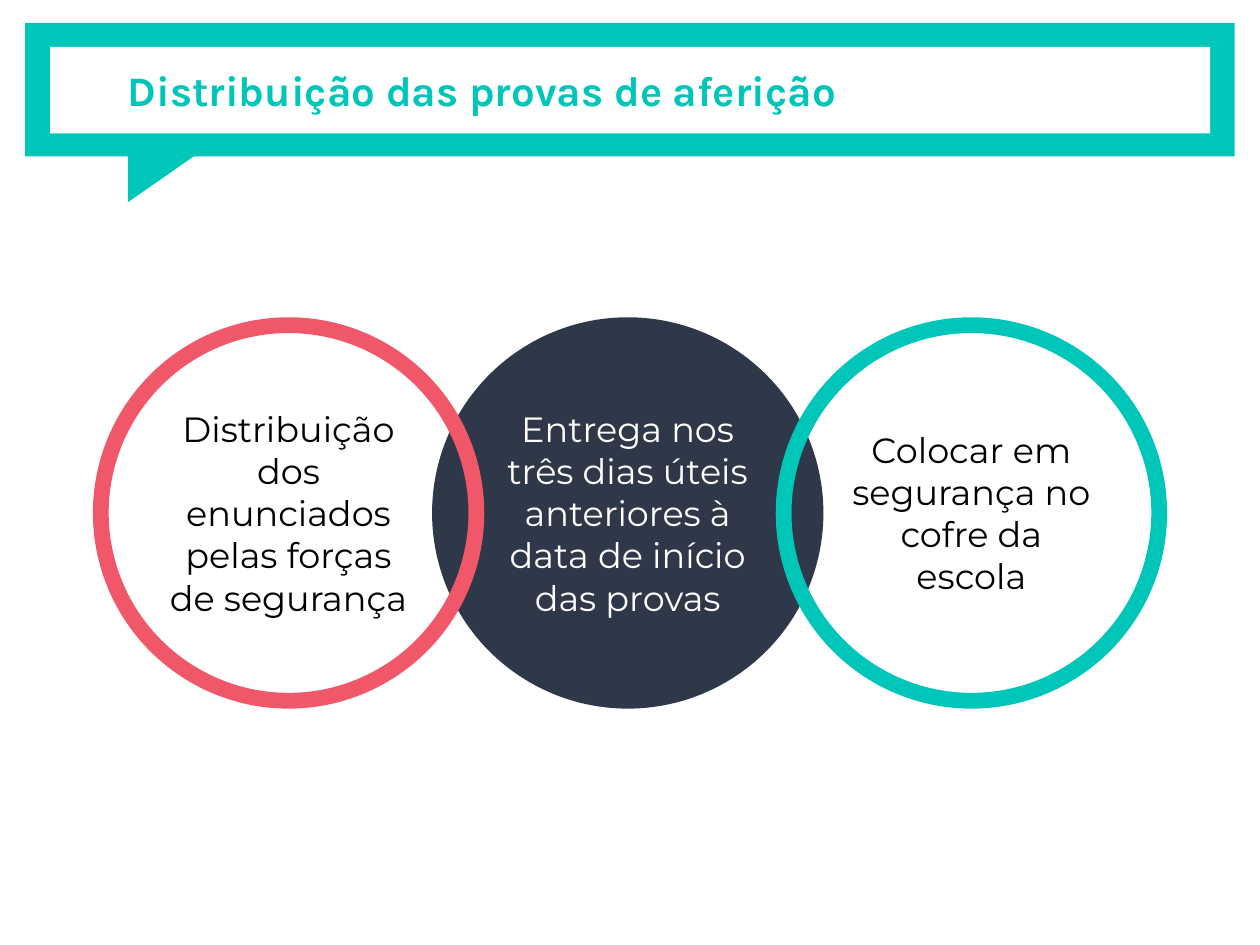
from dataclasses import dataclass
from typing import Optional

import pptx
import pptx.dml.color
import pptx.enum.shapes
import pptx.enum.text
import pptx.util

Pt = pptx.util.Pt
RGBColor = pptx.dml.color.RGBColor
MSO_SHAPE = pptx.enum.shapes.MSO_SHAPE
PP_ALIGN = pptx.enum.text.PP_ALIGN

TEAL = RGBColor(0x00, 0xC5, 0xB9)
NAVY = RGBColor(0x2F, 0x38, 0x48)
CORAL = RGBColor(0xF0, 0x57, 0x68)
WHITE = RGBColor(0xFF, 0xFF, 0xFF)
BLACK = RGBColor(0x00, 0x00, 0x00)

INSET = 7.2
DIAMETER = 214.6
CIRCLE_TOP = 185.8
RING_WIDTH = 9


@dataclass(frozen=True)
class Block:
    kind: MSO_SHAPE
    left: float
    top: float
    width: float
    height: float
    color: RGBColor
    rotation: float = 0


@dataclass(frozen=True)
class Circle:
    left: float
    text: str
    ring: RGBColor
    fill: Optional[RGBColor] = None
    font_color: RGBColor = BLACK


BANNER = [
    Block(MSO_SHAPE.RECTANGLE, 14.4, 13, 691.2, 76.4, TEAL),
    Block(MSO_SHAPE.RIGHT_TRIANGLE, 80.6, 73.4, 34.6, 49.7, TEAL, 90),
    Block(MSO_SHAPE.RECTANGLE, 28.6, 26.8, 662.9, 49.4, WHITE),
]

CIRCLES = [
    Circle(251.4, "Entrega nos três dias úteis anteriores à data de início das provas",
           NAVY, NAVY, WHITE),
    Circle(57.6, "Distribuição dos enunciados pelas forças de segurança", CORAL),
    Circle(447.8, "Colocar em segurança no cofre da escola", TEAL),
]


def set_text(sp, text: str, font: str, size: float, color: RGBColor,
             align: PP_ALIGN, bold: bool = False) -> None:
    tf = sp.text_frame
    tf.word_wrap = True
    tf.vertical_anchor = pptx.enum.text.MSO_ANCHOR.MIDDLE
    tf.margin_left = tf.margin_right = Pt(INSET)
    tf.margin_top = tf.margin_bottom = Pt(INSET)
    tf.text = text
    p = tf.paragraphs[0]
    p.alignment = align
    r = p.runs[0]
    r.font.name = font
    r.font.size = Pt(size)
    r.font.bold = bold
    r.font.color.rgb = color


def draw_block(s, block: Block) -> None:
    sp = s.shapes.add_shape(block.kind, Pt(block.left), Pt(block.top),
                            Pt(block.width), Pt(block.height))
    sp.shadow.inherit = False
    sp.rotation = block.rotation
    sp.fill.solid()
    sp.fill.fore_color.rgb = block.color
    sp.line.fill.background()


def draw_circle(s, circle: Circle) -> None:
    sp = s.shapes.add_shape(MSO_SHAPE.OVAL, Pt(circle.left), Pt(CIRCLE_TOP),
                            Pt(DIAMETER), Pt(DIAMETER))
    sp.shadow.inherit = False
    if circle.fill is None:
        sp.fill.background()
    else:
        sp.fill.solid()
        sp.fill.fore_color.rgb = circle.fill
    sp.line.color.rgb = circle.ring
    sp.line.width = Pt(RING_WIDTH)
    set_text(sp, circle.text, "Montserrat", 20, circle.font_color, PP_ALIGN.CENTER)


def main() -> None:
    prs = pptx.Presentation()
    prs.slide_width = Pt(720)
    prs.slide_height = Pt(540)
    s = prs.slides.add_slide(prs.slide_layouts[6])

    for block in BANNER:
        draw_block(s, block)
    for circle in CIRCLES:
        draw_circle(s, circle)

    title = s.shapes.add_textbox(Pt(65.8), Pt(13), Pt(626), Pt(76.4))
    set_text(title, "Distribuição das provas de aferição", "Karla", 24, TEAL,
             PP_ALIGN.LEFT, bold=True)

    prs.save("out.pptx")


if __name__ == "__main__":
    main()
